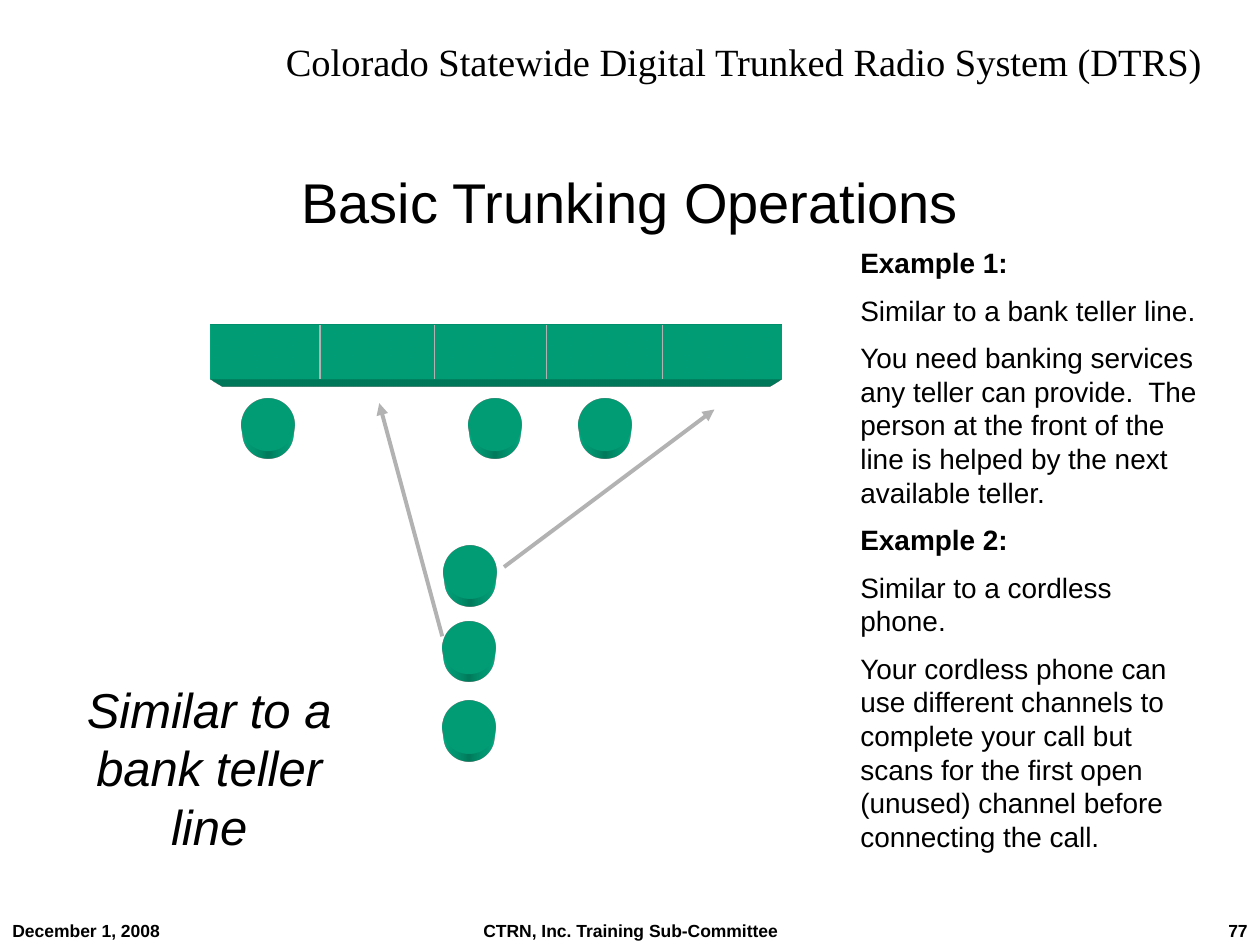
from lxml import etree
from pptx import Presentation
from pptx.dml.color import RGBColor
from pptx.enum.shapes import MSO_CONNECTOR, MSO_SHAPE
from pptx.enum.text import MSO_ANCHOR, PP_ALIGN
from pptx.oxml import parse_xml
from pptx.oxml.ns import nsdecls, qn
from pptx.util import Inches, Pt

COLORS = {"text": "000000", "teller": "00CC99", "line": "B2B2B2"}
SCENE = (
    f'<a:scene3d {nsdecls("a")}><a:camera prst="legacyPerspectiveBottom"/>'
    '<a:lightRig rig="legacyFlat3" dir="t"/></a:scene3d>'
)
DEPTH = (
    f'<a:sp3d {nsdecls("a")} extrusionH="430200" prstMaterial="legacyMatte">'
    f'<a:extrusionClr><a:srgbClr val="{COLORS["teller"]}"/></a:extrusionClr></a:sp3d>'
)

prs = Presentation()
prs.slide_width, prs.slide_height = Inches(10), Inches(7.5)
slide = prs.slides.add_slide(prs.slide_layouts[5])


def write(box, *lines, size, font="Arial", align=PP_ALIGN.LEFT, bold=(),
          italic=False, gap=0, anchor=MSO_ANCHOR.TOP):
    """Fill a box with paragraphs; bold lists the lines set in bold."""
    frame = box.text_frame
    frame.word_wrap = True
    frame.vertical_anchor = anchor
    for i, line in enumerate(lines):
        par = frame.paragraphs[0] if i == 0 else frame.add_paragraph()
        par.alignment = align
        par.space_before = Pt(gap if i else 0)
        run = par.add_run()
        run.text = line
        run.font.name, run.font.size = font, Pt(size)
        run.font.bold, run.font.italic = line in bold, italic
        run.font.color.rgb = RGBColor.from_string(COLORS["text"])


def draw(parent, kind, x1, y1, x2, y2, width=None, arrow=False):
    """Draw a connector when a line width is given, otherwise an extruded shape."""
    if width:
        line = parent.add_connector(kind, *map(Inches, (x1, y1, x2, y2)))
        line.line.color.rgb = RGBColor.from_string(COLORS["line"])
        line.line.width = Pt(width)
        if arrow:
            outline = line._element.spPr.find(qn("a:ln"))
            etree.SubElement(outline, qn("a:tailEnd"), type="triangle")
        etree.SubElement(line._element.spPr, qn("a:effectLst"))
        return
    solid = parent.add_shape(kind, *map(Inches, (x1, y1, x2 - x1, y2 - y1)))
    solid.fill.solid()
    solid.fill.fore_color.rgb = RGBColor.from_string(COLORS["teller"])
    solid.line.fill.background()
    solid.shadow.inherit = False
    for xml in (SCENE, DEPTH):
        solid._element.spPr.append(parse_xml(xml))


# Title and running header
title = slide.shapes.title
title.left, title.top, title.width, title.height = map(Inches, (0.75, 1.01, 8.5, 1.17))
write(title, "Basic Trunking Operations", size=32, align=PP_ALIGN.CENTER,
      anchor=MSO_ANCHOR.MIDDLE)
header = slide.shapes.add_textbox(*map(Inches, (2.17, 0.25, 7.58, 0.47)))
write(header, "Colorado Statewide Digital Trunked Radio System (DTRS)",
      size=22, font="Times New Roman")

# Customers: three at the counter, three waiting in line
customer = 0.42
for x, y in ((3.51, 4.93), (3.51, 5.56), (1.92, 3.16), (3.72, 3.16),
             (4.59, 3.16), (3.52, 4.33)):
    draw(slide.shapes, MSO_SHAPE.FLOWCHART_CONNECTOR, x, y, x + customer, y + customer)

# Teller counter with its dividers
counter = slide.shapes.add_group_shape().shapes
counter_top, counter_bottom = 2.58, 3.01
draw(counter, MSO_SHAPE.RECTANGLE, 1.67, counter_top, 6.2, counter_bottom)
for x in (2.54, 3.45, 4.34, 5.26):
    draw(counter, MSO_CONNECTOR.STRAIGHT, x, counter_top, x, counter_bottom, width=0.75)

# Paths to the free tellers
for ends in ((4, 4.5, 5.67, 3.25), (3.51, 5.05, 3.01, 3.2)):
    draw(slide.shapes, MSO_CONNECTOR.STRAIGHT, *ends, width=2.25, arrow=True)

# Examples and caption
examples = slide.shapes.add_textbox(*map(Inches, (6.73, 1.9, 2.92, 5.05)))
write(examples,
      "Example 1:",
      "Similar to a bank teller line.",
      "You need banking services any teller can provide.  The person at the front "
      "of the line is helped by the next available teller.",
      "Example 2:",
      "Similar to a cordless phone.",
      "Your cordless phone can use different channels to complete your call but "
      "scans for the first open (unused) channel before connecting the call.",
      size=16, gap=8, bold=("Example 1:", "Example 2:"))
caption = slide.shapes.add_textbox(*map(Inches, (0.44, 5.34, 2.44, 1.51)))
write(caption, "Similar to a bank teller line", size=28, italic=True,
      align=PP_ALIGN.CENTER)

# Footer
for words, x, width, align in (
    ("December 1, 2008", 0, 2.08, PP_ALIGN.LEFT),
    ("CTRN, Inc. Training Sub-Committee", 3.42, 3.17, PP_ALIGN.CENTER),
    ("77", 7.92, 2.08, PP_ALIGN.RIGHT),
):
    footer = slide.shapes.add_textbox(*map(Inches, (x, 7.25, width, 0.25)))
    write(footer, words, size=10, align=align, bold=(words,))

prs.save("out.pptx")
